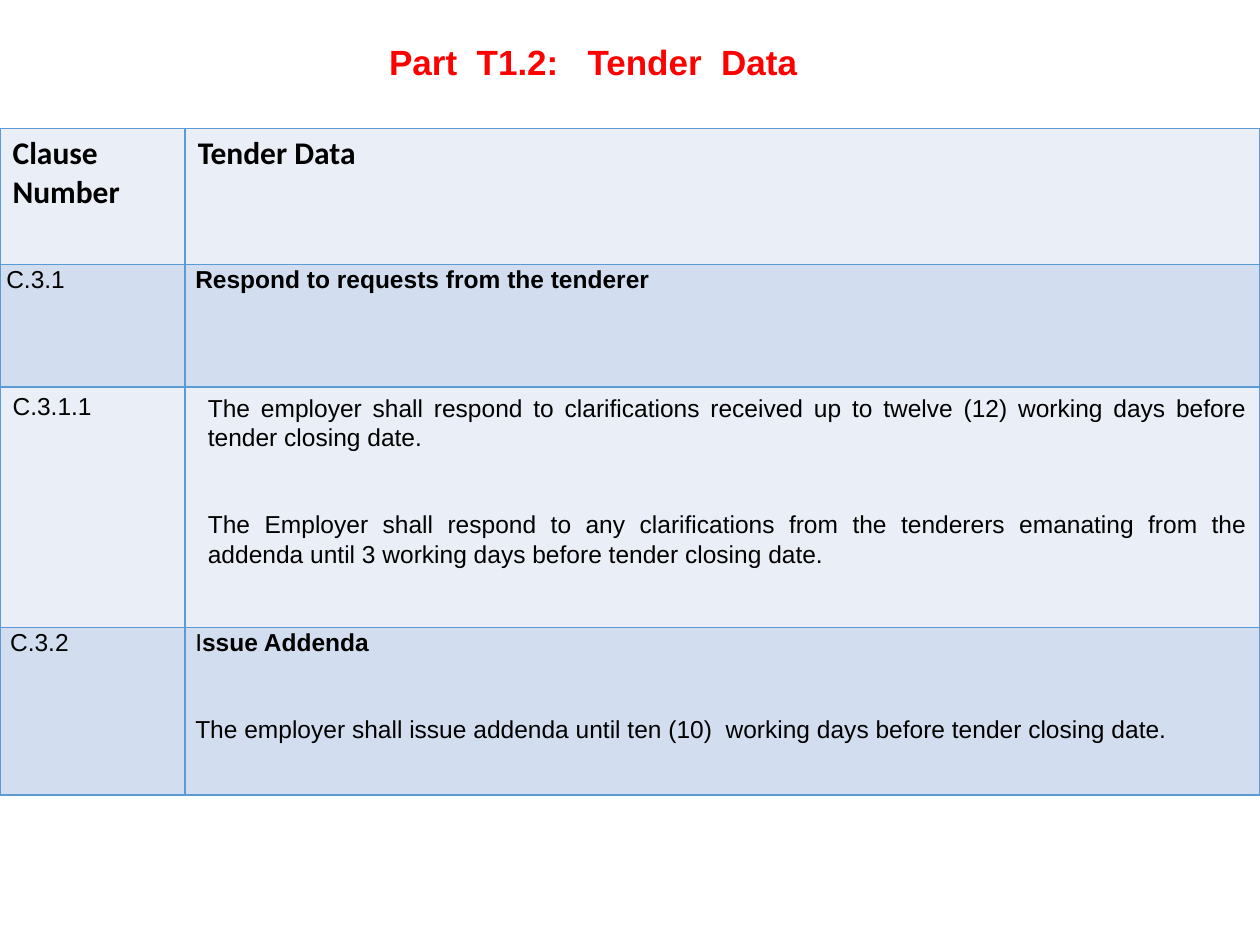
import pptx
import pptx.util
import pptx.dml.color
import pptx.enum.text
import pptx.oxml
from dataclasses import dataclass


@dataclass(frozen=True)
class Theme:
    title_colour: str = "FF0000"
    text_colour: str = "000000"
    border: str = "5B9BD5"
    bands: tuple = ("EAEFF7", "D2DEEF")
    body_font: str = "Arial"
    header_font: str = "Calibri"
    title_size: int = 20
    header_size: int = 18
    body_size: int = 14
    border_width: int = 1


THEME = Theme()
ALIGN = pptx.enum.text.PP_ALIGN
WIDTH, HEIGHT = pptx.util.Inches(10), pptx.util.Inches(7.5)
PARAGRAPH_GAP = 33  # points between body paragraphs
INDENT = 0.08
CELL_MARGINS = (0.1, 0.05)

# Each cell is a list of paragraphs, each paragraph a list of (text, bold) runs
HEADER = ([[("Clause", True)], [("Number", True)]], [[("Tender Data", True)]])
# Height in inches, clause, clause indent, whether the cells have margins, data
CLAUSES = [
    (0.97, "C.3.1", 0.05, False, [[("Respond to requests from the tenderer", True)]]),
    (1.91, "C.3.1.1", 0, True, [
        [("The employer shall respond to clarifications received up to twelve (12) "
          "working days before tender closing date.", False)],
        [("The Employer shall respond to any clarifications from the tenderers emanating "
          "from the addenda until 3 working days before tender closing date.", False)]]),
    (1.33, "C.3.2", INDENT, False, [
        [("I", False), ("ssue Addenda", True)],
        [("The employer shall issue addenda until ten (10)  working days before "
          "tender closing date.", False)]]),
]
HEADER_HEIGHT = 1.08


def add_run(paragraph, text, font_name, size, colour, bold):
    run = paragraph.add_run()
    run.text = text
    run.font.name = font_name
    run.font.size = pptx.util.Pt(size)
    run.font.bold = bold
    run.font.color.rgb = pptx.dml.color.RGBColor.from_string(colour)


def place_title(slide, left, top, width, height):
    title = slide.shapes.title
    title.left, title.top, title.width, title.height = map(int, (left, top, width, height))
    frame = title.text_frame
    frame.word_wrap = False
    paragraph = frame.paragraphs[0]
    paragraph.alignment = ALIGN.CENTER
    add_run(paragraph, "Part  T1.2:   Tender  Data", THEME.body_font,
            THEME.title_size, THEME.title_colour, True)


def format_cell(cell, fill, margins):
    """Borders go before the fill, as the schema asks."""
    properties = cell._tc.get_or_add_tcPr()
    for side in ("lnL", "lnR", "lnT", "lnB"):
        properties.append(pptx.oxml.parse_xml(
            f'<a:{side} xmlns:a="http://schemas.openxmlformats.org/drawingml/2006/main" '
            f'w="{pptx.util.Pt(THEME.border_width)}"><a:solidFill>'
            f'<a:srgbClr val="{THEME.border}"/></a:solidFill></a:{side}>'))
    cell.fill.solid()
    cell.fill.fore_color.rgb = pptx.dml.color.RGBColor.from_string(fill)
    cell.margin_left = cell.margin_right = pptx.util.Inches(margins[0])
    cell.margin_top = cell.margin_bottom = pptx.util.Inches(margins[1])


def write_cell(cell, paragraphs, font_name, size, indent=0, gap=0, spacing=1.0,
               align=ALIGN.LEFT):
    frame = cell.text_frame
    for index, runs in enumerate(paragraphs):
        paragraph = frame.add_paragraph() if index else frame.paragraphs[0]
        paragraph.alignment = align
        paragraph.line_spacing = spacing
        if index:
            paragraph.space_before = pptx.util.Pt(gap)
        if indent:
            paragraph._p.get_or_add_pPr().set("marL", str(pptx.util.Inches(indent)))
            paragraph._p.get_or_add_pPr().set("indent", "0")
        for text, bold in runs:
            add_run(paragraph, text, font_name, size, THEME.text_colour, bold)


def place_table(slide, left, top, width):
    heights = [HEADER_HEIGHT] + [clause[0] for clause in CLAUSES]
    table = slide.shapes.add_table(len(heights), 2, int(left), int(top), int(width),
                                   pptx.util.Inches(sum(heights))).table
    table.first_row = table.horz_banding = False
    for column, share in zip(table.columns, (0.147, 0.853)):
        column.width = int(width * share)
    for row, height in zip(table.rows, heights):
        row.height = pptx.util.Inches(height)

    # Header row
    for column, paragraphs in enumerate(HEADER):
        cell = table.cell(0, column)
        format_cell(cell, THEME.bands[0], CELL_MARGINS)
        write_cell(cell, paragraphs, THEME.header_font, THEME.header_size)

    # Clause rows in alternating bands
    for row, (_, number, number_indent, padded, data) in enumerate(CLAUSES, 1):
        number_cell, data_cell = table.cell(row, 0), table.cell(row, 1)
        for cell in (number_cell, data_cell):
            format_cell(cell, THEME.bands[row % 2], CELL_MARGINS if padded else (0, 0))
        write_cell(number_cell, [[(number, False)]], THEME.body_font, THEME.body_size,
                   number_indent, spacing=1.0 if padded else 1.07)
        write_cell(data_cell, data, THEME.body_font, THEME.body_size, INDENT,
                   PARAGRAPH_GAP, 1.07, ALIGN.JUSTIFY)


def main():
    deck = pptx.Presentation()
    deck.slide_width, deck.slide_height = WIDTH, HEIGHT
    slide = deck.slides.add_slide(deck.slide_layouts[5])
    place_title(slide, WIDTH * 0.298, HEIGHT * 0.036, WIDTH * 0.346, HEIGHT * 0.058)
    place_table(slide, 0, HEIGHT * 0.136, WIDTH)
    deck.save("out.pptx")


if __name__ == "__main__":
    main()
